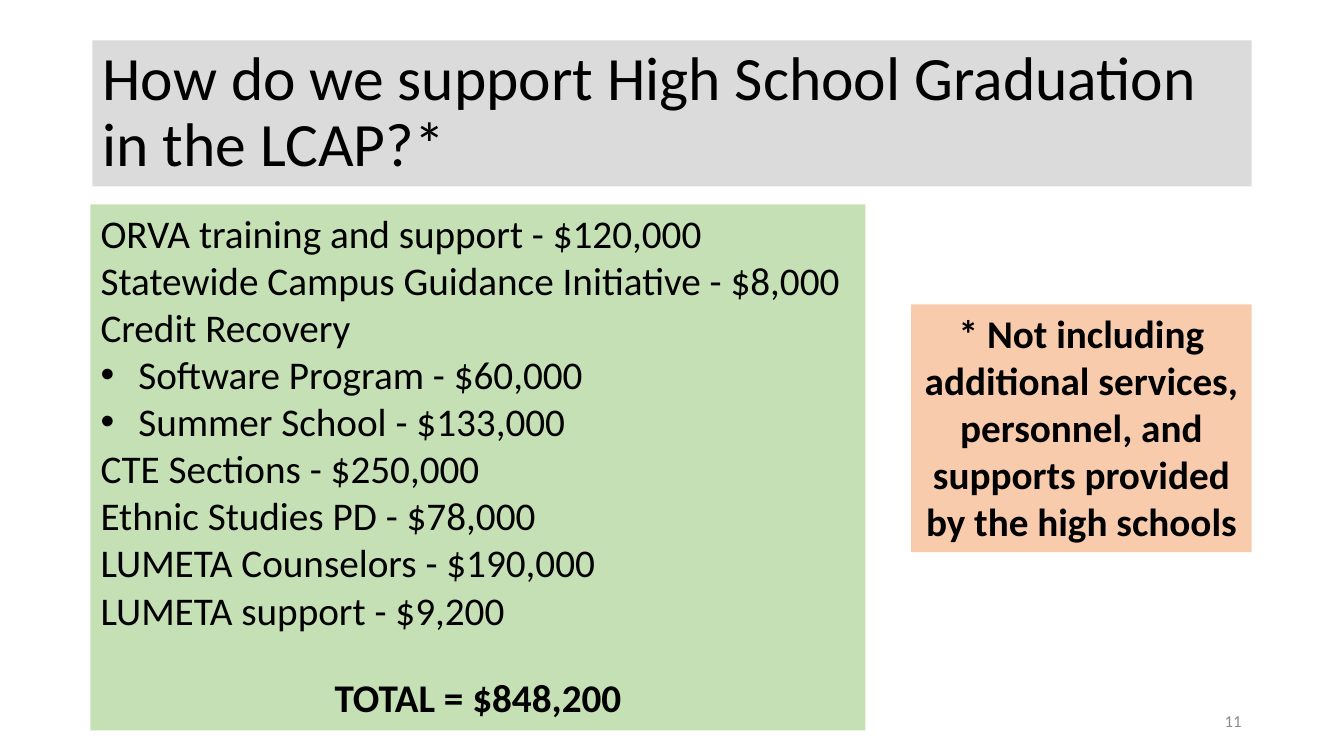
import pptx
import pptx.util
import pptx.dml.color
import pptx.enum.text
import pptx.oxml.ns
from lxml import etree

Pt = pptx.util.Pt
RGBColor = pptx.dml.color.RGBColor
ALIGN = pptx.enum.text.PP_ALIGN
ANCHOR = pptx.enum.text.MSO_ANCHOR

BLACK = RGBColor(0x00, 0x00, 0x00)
GREY_TEXT = RGBColor(0x8C, 0x8C, 0x8C)
TITLE_GREY = RGBColor(0xDB, 0xDB, 0xDB)
BUDGET_GREEN = RGBColor(0xC5, 0xE0, 0xB4)
NOTE_ORANGE = RGBColor(0xF8, 0xCB, 0xAD)

FONT = "Calibri"
BODY_SIZE = 28
BULLET_INDENT = 27
TOTAL_GAP = 29

# Budget lines: text, bulleted
BUDGET = [
    ("ORVA training and support - $120,000", False),
    ("Statewide Campus Guidance Initiative - $8,000", False),
    ("Credit Recovery", False),
    ("Software Program - $60,000", True),
    ("Summer School - $133,000", True),
    ("CTE Sections - $250,000", False),
    ("Ethnic Studies PD - $78,000", False),
    ("LUMETA Counselors - $190,000", False),
    ("LUMETA support - $9,200", False),
]
TOTAL = "TOTAL = $848,200"


def place(shape, box, anchor, fill=None):
    """Move a shape into its box and prepare its text frame."""
    shape.left, shape.top, shape.width, shape.height = (Pt(v) for v in box)
    if fill is not None:
        shape.fill.solid()
        shape.fill.fore_color.rgb = fill
    frame = shape.text_frame
    frame.word_wrap = True
    frame.auto_size = pptx.enum.text.MSO_AUTO_SIZE.NONE
    frame.vertical_anchor = anchor
    return frame


def write(para, text, size, color=BLACK, bold=False, align=ALIGN.LEFT, spacing=1.0, before=0):
    para.alignment = align
    para.line_spacing = spacing
    para.space_before = Pt(before)
    span = para.add_run()
    span.text = text
    span.font.name = FONT
    span.font.size = Pt(size)
    span.font.bold = bold
    span.font.color.rgb = color


def set_bullet(para, bulleted):
    """Give a list paragraph a hanging bullet, or none at all."""
    indent = Pt(BULLET_INDENT) if bulleted else 0
    properties = para._p.get_or_add_pPr()
    properties.set("marL", str(indent))
    properties.set("indent", str(-indent))
    qn = pptx.oxml.ns.qn
    if bulleted:
        etree.SubElement(properties, qn("a:buFont")).set("typeface", "Arial")
        etree.SubElement(properties, qn("a:buChar")).set("char", "•")
    else:
        etree.SubElement(properties, qn("a:buNone"))


def add_title(page, box):
    frame = place(page.shapes.title, box, ANCHOR.MIDDLE, TITLE_GREY)
    write(frame.paragraphs[0], "How do we support High School Graduation in the LCAP?*",
          44, spacing=0.9)


def add_budget(page, box):
    frame = place(page.placeholders[1], box, ANCHOR.TOP, BUDGET_GREEN)
    para = frame.paragraphs[0]
    for text, bulleted in BUDGET:
        write(para, text, BODY_SIZE)
        set_bullet(para, bulleted)
        para = frame.add_paragraph()
    # Total, set apart from the list
    write(para, TOTAL, BODY_SIZE, bold=True, align=ALIGN.CENTER, before=TOTAL_GAP)
    set_bullet(para, False)


def add_text(page, box, text, size, anchor, fill=None, **style):
    shape = page.shapes.add_textbox(0, 0, 0, 0)
    frame = place(shape, box, anchor, fill)
    write(frame.paragraphs[0], text, size, **style)


def add_note(page, box):
    add_text(page, box,
             "* Not including additional services, personnel, and supports provided"
             " by the high schools",
             BODY_SIZE, ANCHOR.TOP, NOTE_ORANGE, bold=True, align=ALIGN.CENTER)


def add_page_number(page, box):
    add_text(page, box, "11", 12, ANCHOR.MIDDLE, color=GREY_TEXT, align=ALIGN.RIGHT)


def main():
    deck = pptx.Presentation()
    deck.slide_width, deck.slide_height = Pt(960), Pt(540)
    page = deck.slides.add_slide(deck.slide_layouts[1])
    add_title(page, (66, 28.8, 828, 104.4))
    add_page_number(page, (678, 500.4, 216, 28.8))
    add_note(page, (650.8, 217.4, 243.2, 177))
    add_budget(page, (64.6, 145.9, 553.6, 375.8))
    deck.save("out.pptx")


if __name__ == "__main__":
    main()
